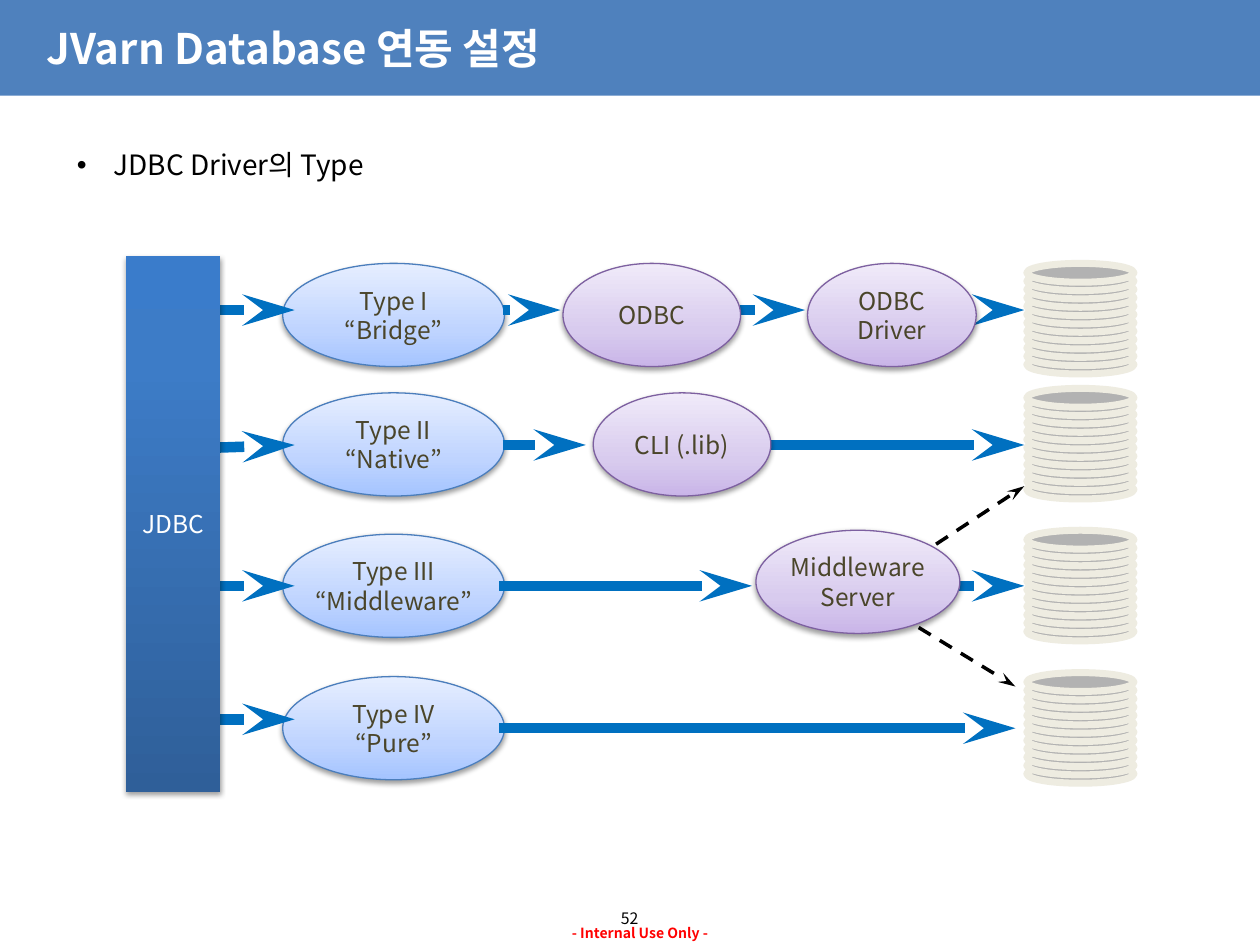
from dataclasses import dataclass

from lxml.etree import SubElement
from pptx import Presentation
from pptx.dml.color import RGBColor
from pptx.enum.dml import MSO_LINE
from pptx.enum.shapes import MSO_CONNECTOR, MSO_SHAPE
from pptx.enum.text import MSO_ANCHOR, PP_ALIGN
from pptx.oxml.ns import qn
from pptx.util import Cm, Pt


@dataclass(frozen=True)
class Theme:
    font: str = "Noto Sans CJK KR"
    banner: str = "4F81BD"
    white: str = "FFFFFF"
    black: str = "000000"
    red: str = "FF0000"
    label: str = "4A452A"
    arrow: str = "0070C0"
    disc: str = "B2B2B2"
    disc_rim: str = "EEECE1"
    blue_rim: str = "4B7EBC"
    purple_rim: str = "7D60A0"
    # Gradient stops: (percent, colour), from the bottom up
    blue: tuple = ((0, "A4C4FF"), (35, "BFD4FF"), (100, "E6EEFF"))
    purple: tuple = ((0, "C9B5E8"), (35, "D8CBEE"), (100, "F0EAF9"))
    dark_blue: tuple = ((0, "2F5F99"), (80, "3D7CC7"), (100, "3A7CCB"))
    title_size: int = 24
    body_size: int = 16
    label_size: int = 14
    page_size: int = 9
    footer_size: int = 8


T = Theme()
rgb = RGBColor.from_string


def write(tf, lines, size, color, bold=False, align=PP_ALIGN.CENTER):
    for i, line in enumerate(lines):
        p = tf.add_paragraph() if i else tf.paragraphs[0]
        p.alignment = align
        r = p.add_run()
        r.text = line
        r.font.size, r.font.bold = Pt(size), bold
        r.font.color.rgb = rgb(color)
        r.font.name = T.font
        SubElement(r.font._element, qn("a:ea"), typeface=T.font)


def add_node(kind, x, y, w, h, lines, stops, rim, color):
    s = shapes.add_shape(kind, Cm(x), Cm(y), Cm(w), Cm(h))
    if rim:
        s.line.color.rgb, s.line.width = rgb(rim), Pt(0.75)
    else:
        s.line.fill.background()

    # Vertical gradient
    s.fill.gradient()
    grad = s._element.spPr.find(qn("a:gradFill"))
    gs_list = grad.find(qn("a:gsLst"))
    for gs in list(gs_list):
        gs_list.remove(gs)
    for pos, stop in stops:
        gs = SubElement(gs_list, qn("a:gs"), pos=str(pos * 1000))
        SubElement(gs, qn("a:srgbClr"), val=stop)
    s.fill.gradient_angle = 90

    # Soft shadow straight below
    s.shadow.inherit = False
    effects = s._element.spPr.find(qn("a:effectLst"))
    shadow = SubElement(effects, qn("a:outerShdw"), blurRad=str(Pt(3.1)),
                        dist=str(Pt(1.6)), dir="5400000", rotWithShape="0")
    clr = SubElement(shadow, qn("a:srgbClr"), val=T.black)
    SubElement(clr, qn("a:alpha"), val="38000")

    tf = s.text_frame
    tf.word_wrap, tf.vertical_anchor = False, MSO_ANCHOR.MIDDLE
    write(tf, lines, T.label_size, color)


prs = Presentation()
prs.slide_width, prs.slide_height = Cm(25.4), Cm(19.05)
shapes = prs.slides.add_slide(prs.slide_layouts[6]).shapes

# Title banner
s = shapes.add_shape(MSO_SHAPE.RECTANGLE, 0, 0, Cm(25.4), Cm(1.93))
s.fill.solid()
s.fill.fore_color.rgb = rgb(T.banner)
s.line.fill.background()
s.shadow.inherit = False
tf = shapes.add_textbox(Cm(0.69), 0, Cm(23.83), Cm(1.93)).text_frame
tf.word_wrap, tf.vertical_anchor = True, MSO_ANCHOR.MIDDLE
write(tf, ["JVarn Database 연동 설정"], T.title_size, T.white, True, PP_ALIGN.LEFT)

# Page number and footer
tf = shapes.add_textbox(Cm(11.96), Cm(18.01), Cm(1.47), Cm(1.02)).text_frame
tf.margin_left = tf.margin_right = tf.margin_top = tf.margin_bottom = 0
tf.word_wrap, tf.vertical_anchor = False, MSO_ANCHOR.MIDDLE
write(tf, ["52"], T.page_size, T.black)
tf = shapes.add_textbox(Cm(9.3), Cm(18.52), Cm(7.21), Cm(0.61)).text_frame
tf.word_wrap = True
write(tf, ["- Internal Use Only -"], T.footer_size, T.red, True)

# Bullet line
tf = shapes.add_textbox(Cm(1.3), Cm(2.72), Cm(21.77), Cm(1.07)).text_frame
tf.word_wrap = True
p = tf.paragraphs[0]
p.line_spacing = 1.2
pPr = p._p.get_or_add_pPr()
pPr.set("marL", str(Cm(0.74)))
pPr.set("indent", str(-Cm(0.74)))
SubElement(pPr, qn("a:buFont"), typeface="Arial")
SubElement(pPr, qn("a:buChar"), char="•")
write(tf, ["JDBC Driver의 Type"], T.body_size, T.black, align=PP_ALIGN.LEFT)

# Driver types
NODE_H = 2.08
for y, lines in [
    (5.31, ["Type I", "“Bridge”"]),
    (7.92, ["Type II", "“Native”"]),
    (10.77, ["Type III", "“Middleware”"]),
    (13.64, ["Type IV", "“Pure”"]),
]:
    add_node(MSO_SHAPE.OVAL, 5.7, y, 4.47, NODE_H, lines, T.blue, T.blue_rim, T.label)

# Databases: stacks of discs, laid from the bottom up
DISCS, STACK_H = 12, 1.85
for top in (5.31, 7.83, 10.69, 13.56):
    for i in reversed(range(DISCS)):
        y = top + i * STACK_H / (DISCS - 1)
        s = shapes.add_shape(MSO_SHAPE.OVAL, Cm(20.7), Cm(y), Cm(2.16), Cm(0.38))
        s.fill.solid()
        s.fill.fore_color.rgb = rgb(T.disc)
        s.line.color.rgb, s.line.width = rgb(T.disc_rim), Pt(4)
        s.shadow.inherit = False

# Arrows: call paths, then the dashed middleware links
ROW1, ROW2, ROW3, ROW4 = 6.25, 8.97, 11.81, 14.68
paths = [
    (10.06, ROW4, 20.47, ROW4),
    (10.06, ROW3, 15.16, ROW3),
    (10.13, ROW2, 11.81, ROW2),
    (10.13, ROW1, 11.3, ROW1),
    (14.55, ROW1, 16.23, ROW1),
    (18.97, ROW1, 20.65, ROW1),
    (15.52, ROW2, 20.65, ROW2),
    (19.23, ROW3, 20.65, ROW3),
    (3.91, 9.04, 5.94, ROW2),
    (4.27, ROW1, 5.94, ROW1),
    (4.27, 14.5, 5.94, 14.5),
    (4.27, ROW3, 5.94, ROW3),
]
links = [(18.87, 10.97, 20.65, 9.8), (18.52, 12.65, 20.47, 13.84)]
for group, color, width, dash in [
    (paths, T.arrow, 6, None),
    (links, T.black, 2, MSO_LINE.DASH),
]:
    for ends in group:
        c = shapes.add_connector(MSO_CONNECTOR.STRAIGHT, *map(Cm, ends))
        c.line.color.rgb, c.line.width = rgb(color), Pt(width)
        if dash:
            c.line.dash_style = dash
        SubElement(c.line._get_or_add_ln(), qn("a:tailEnd"),
                   type="stealth", w="med", len="lg")
        SubElement(c._element.spPr, qn("a:effectLst"))

# JDBC bar
add_node(MSO_SHAPE.RECTANGLE, 2.54, 5.16, 1.9, 10.8, ["JDBC"], T.dark_blue, None, T.white)

# Intermediate layers
for x, y, w, lines in [
    (11.35, 5.31, 3.58, ["ODBC"]),
    (16.28, 5.31, 3.4, ["ODBC", "Driver"]),
    (11.96, 7.92, 3.58, ["CLI (.lib)"]),
    (15.24, 10.69, 4.11, ["Middleware", "Server"]),
]:
    add_node(MSO_SHAPE.OVAL, x, y, w, NODE_H, lines, T.purple, T.purple_rim, T.label)

prs.save("out.pptx")
